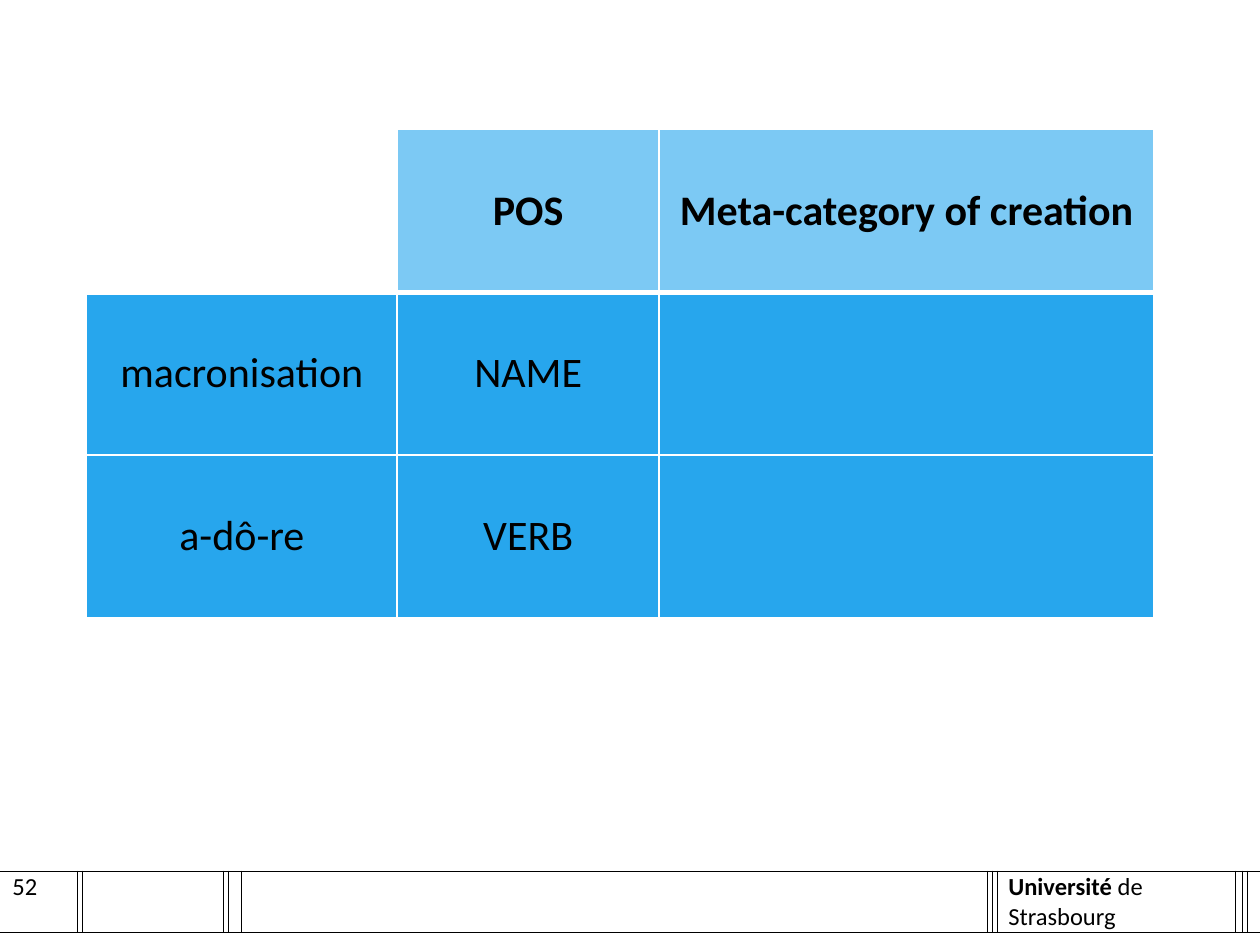
from dataclasses import dataclass

from lxml.etree import SubElement
from pptx import Presentation
from pptx.dml.color import RGBColor
from pptx.enum.text import MSO_ANCHOR, PP_ALIGN
from pptx.oxml import parse_xml
from pptx.oxml.ns import nsdecls, qn
from pptx.util import Pt


@dataclass(frozen=True)
class Theme:
    font: str = "Calibri"
    ink: str = "000000"
    paper: str = "FFFFFF"
    head: str = "7CC9F4"
    body: str = "27A6ED"
    big: float = 24
    small: float = 14
    tiny: float = 1


@dataclass(frozen=True)
class Grid:
    left: float
    top: float
    cols: tuple[float, ...]
    rows: tuple[float, ...]


@dataclass(frozen=True)
class Edge:
    side: str
    color: str
    width: float


THEME = Theme()
FOOT = Grid(0, 476.8, (44, 3, 80.5, 2.5, 7.5, 426.5, 3, 3, 136, 3.5, 3, 7.5), (21, 35, 7))
MAIN = Grid(49.5, 74, (177.5, 149.7, 282.8), (93, 93, 93))
WORDS = (
    ("", "POS", "Meta-category of creation"),
    ("macronisation", "NAME", ""),
    ("a-dô-re", "VERB", ""),
)


def add_run(para, text: str, size: float, bold: bool = False) -> None:
    run = para.add_run()
    run.text = text
    font = run.font
    font.name, font.size, font.bold = THEME.font, Pt(size), bold
    font.color.rgb = RGBColor.from_string(THEME.ink)


def add_grid(slide, grid: Grid):
    frame = slide.shapes.add_table(
        len(grid.rows), len(grid.cols), Pt(grid.left), Pt(grid.top),
        Pt(sum(grid.cols)), Pt(sum(grid.rows)))
    table = frame.table
    table.first_row = table.horz_banding = False
    for col, width in zip(table.columns, grid.cols):
        col.width = Pt(width)
    for row, height in zip(table.rows, grid.rows):
        row.height = Pt(height)
    return table


def paint(cell, color: str) -> None:
    cell.fill.solid()
    cell.fill.fore_color.rgb = RGBColor.from_string(color)


def add_edges(cell, edges: list[Edge]) -> None:
    props = cell._tc.get_or_add_tcPr()
    ranked = sorted(edges, key=lambda edge: "LRTB".index(edge.side))
    for spot, edge in enumerate(ranked):
        props.insert(spot, parse_xml(
            f'<a:ln{edge.side} {nsdecls("a")} w="{Pt(edge.width)}"><a:solidFill>'
            f'<a:srgbClr val="{edge.color}"/></a:solidFill></a:ln{edge.side}>'))


def shrink(cell) -> None:
    cell.margin_left = cell.margin_right = cell.margin_top = cell.margin_bottom = 0
    para = cell.text_frame.paragraphs[0]
    SubElement(para._p, qn("a:endParaRPr")).set("sz", str(int(THEME.tiny * 100)))


def add_foot(slide) -> None:
    table = add_grid(slide, FOOT)
    last = len(FOOT.cols) - 1
    for row in range(len(FOOT.rows)):
        for col in range(last + 1):
            cell = table.cell(row, col)
            paint(cell, THEME.paper)
            sides = ("B", "LRTB", "T")[row]
            if col == 0:
                sides = sides.replace("L", "")
            if col == last:
                sides = sides.replace("R", "")
            add_edges(cell, [Edge(side, THEME.ink, 0.5) for side in sides])
            if (row, col) != (1, 8):
                shrink(cell)
    for row in (0, 2):
        table.cell(row, 0).merge(table.cell(row, last))
    cell = table.cell(1, 8)
    cell.margin_left, cell.margin_top = Pt(6), Pt(0.7)
    cell.margin_right = cell.margin_bottom = 0
    para = cell.text_frame.paragraphs[0]
    add_run(para, "Université", THEME.small, True)
    add_run(para, " de Strasbourg", THEME.small)


def add_page(slide) -> None:
    box = slide.shapes.add_textbox(0, Pt(495.4), Pt(44), Pt(21.6))
    frame = box.text_frame
    frame.word_wrap = True
    frame.vertical_anchor = MSO_ANCHOR.MIDDLE
    add_run(frame.paragraphs[0], "52", THEME.small)


def add_main(slide) -> None:
    table = add_grid(slide, MAIN)
    for row, line in enumerate(WORDS):
        for col, word in enumerate(line):
            cell = table.cell(row, col)
            if row == col == 0:
                cell.fill.background()
            else:
                paint(cell, THEME.body if row else THEME.head)
            thick = {(0, "B"): 3, (1, "T"): 3}
            add_edges(cell, [Edge(side, THEME.paper, thick.get((row, side), 1)) for side in "LRTB"])
            cell.vertical_anchor = MSO_ANCHOR.MIDDLE
            if word:
                para = cell.text_frame.paragraphs[0]
                para.alignment = PP_ALIGN.CENTER
                add_run(para, word, THEME.big, row == 0)


def main() -> None:
    deck = Presentation()
    deck.slide_width, deck.slide_height = Pt(720), Pt(540)
    slide = deck.slides.add_slide(deck.slide_layouts[6])
    add_foot(slide)
    add_page(slide)
    add_main(slide)
    deck.save("out.pptx")


if __name__ == "__main__":
    main()
